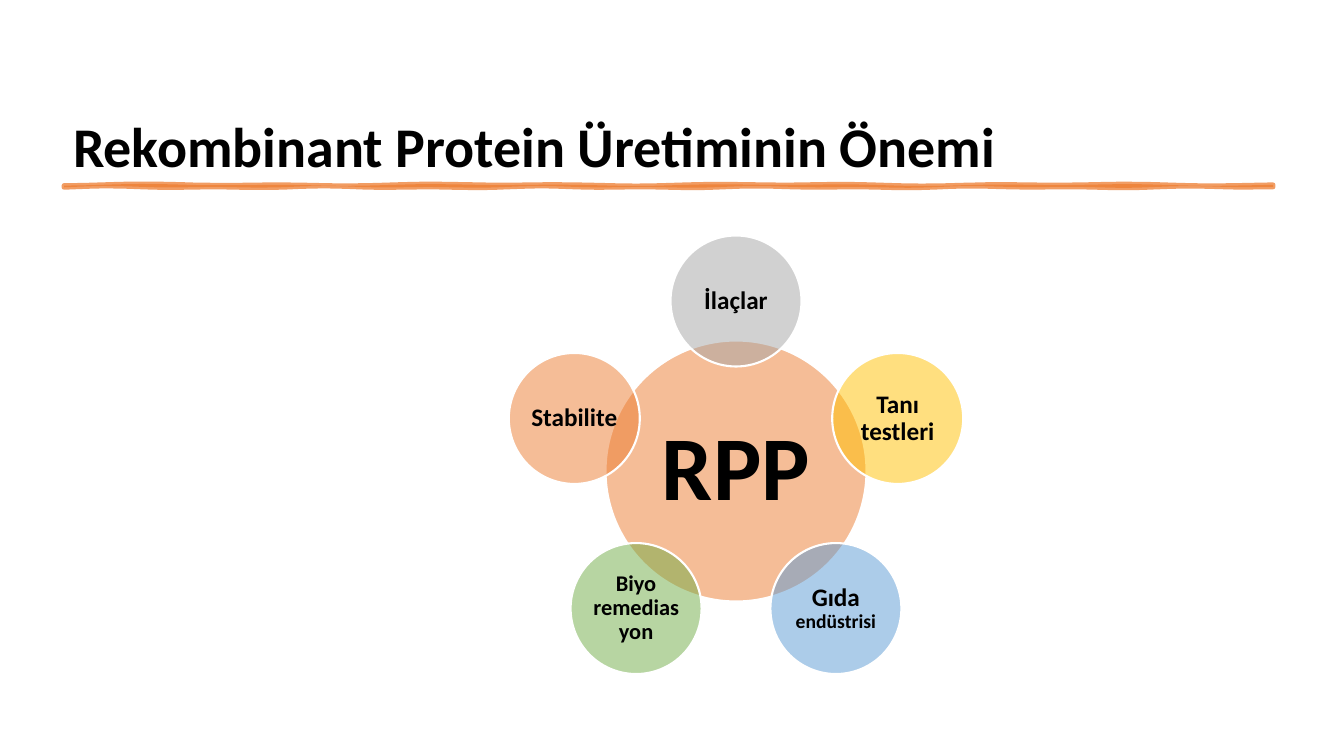
"""Build the slide on why recombinant protein production matters."""
from math import cos, pi, radians, sin

from lxml import etree
from pptx import Presentation
from pptx.dml.color import RGBColor
from pptx.enum.shapes import MSO_SHAPE
from pptx.enum.text import MSO_ANCHOR, PP_ALIGN
from pptx.oxml.ns import qn
from pptx.util import Pt

PX = 12192000 / 1344
FONT = "Calibri"
BLACK = RGBColor(0x00, 0x00, 0x00)
WHITE = RGBColor(0xFF, 0xFF, 0xFF)
ORANGE = RGBColor(0xED, 0x7D, 0x31)
GREY = RGBColor(0xA5, 0xA5, 0xA5)
GOLD = RGBColor(0xFF, 0xC0, 0x00)
BLUE = RGBColor(0x5B, 0x9B, 0xD5)
GREEN = RGBColor(0x70, 0xAD, 0x47)


def px(length):
    return round(length * PX)


def paint(fill, color, percent):
    fill.solid()
    fill.fore_color.rgb = color
    for tint in fill._xPr.iter(qn("a:srgbClr")):
        etree.SubElement(tint, qn("a:alpha"), val=str(percent * 1000))


deck = Presentation()
deck.slide_width = px(1344)
deck.slide_height = px(756)
page = deck.slides.add_slide(deck.slide_layouts[5])

title = page.shapes.title
title.left, title.top, title.width, title.height = px(63), px(74), px(1215), px(111)
title.text_frame.text = "Rekombinant Protein Üretiminin Önemi"
title.text_frame.vertical_anchor = MSO_ANCHOR.BOTTOM
para = title.text_frame.paragraphs[0]
para.alignment = PP_ALIGN.LEFT
para.line_spacing = 0.9
para.font.name = FONT
para.font.size = Pt(40)
para.font.bold = True
para.font.color.rgb = BLACK

RULE_LEFT, RULE_RIGHT, RULE_TOP, RULE_BOTTOM = 64, 1273, 185, 187
stations = range(RULE_LEFT, RULE_RIGHT + 1, 13)
upper = [(x, RULE_TOP + sin(x / 31) * sin(x / 83)) for x in stations]
lower = [(x, RULE_BOTTOM + sin(x / 23) * sin(x / 67)) for x in reversed(stations)]
outline = [(round(x * 10), round(y * 10)) for x, y in upper + lower]
builder = page.shapes.build_freeform(*outline[0], scale=PX / 10)
builder.add_line_segments(outline[1:], close=True)
rule = builder.convert_to_shape()
rule.shadow.inherit = False
paint(rule.fill, ORANGE, 75)
paint(rule.line.fill, ORANGE, 75)
rule.line.width = Pt(3.5)

CENTER_X, CENTER_Y, ORBIT = 736, 471, 170
HUB, SATELLITE = 261, 131
satellites = [
    (GREY, [("İlaçlar", 18)]),
    (GOLD, [("Tanı testleri", 18)]),
    (BLUE, [("Gıda ", 18), ("endüstrisi", 14)]),
    (GREEN, [("Biyo remediasyon", 16)]),
    (ORANGE, [("Stabilite", 18)]),
]
circles = [(CENTER_X, CENTER_Y, HUB, 9, ORANGE, [("RPP", 65)])]
for index, (color, label) in enumerate(satellites):
    angle = radians(360 / len(satellites) * index) - pi / 2
    x, y = CENTER_X + ORBIT * cos(angle), CENTER_Y + ORBIT * sin(angle)
    circles.append((x, y, SATELLITE, 3, color, label))

for x, y, size, inset, color, label in circles:
    circle = page.shapes.add_shape(
        MSO_SHAPE.OVAL, px(x - size / 2), px(y - size / 2), px(size), px(size))
    circle.shadow.inherit = False
    paint(circle.fill, color, 50)
    circle.line.color.rgb = WHITE
    circle.line.width = Pt(1.5)
    frame = circle.text_frame
    frame.word_wrap = True
    frame.vertical_anchor = MSO_ANCHOR.MIDDLE
    frame.margin_left = frame.margin_right = px(inset)
    frame.margin_top = frame.margin_bottom = px(inset)
    para = frame.paragraphs[0]
    para.alignment = PP_ALIGN.CENTER
    para.line_spacing = 0.9
    for words, points in label:
        span = para.add_run()
        span.text = words
        span.font.name = FONT
        span.font.size = Pt(points)
        span.font.bold = True
        span.font.color.rgb = BLACK

deck.save("out.pptx")
